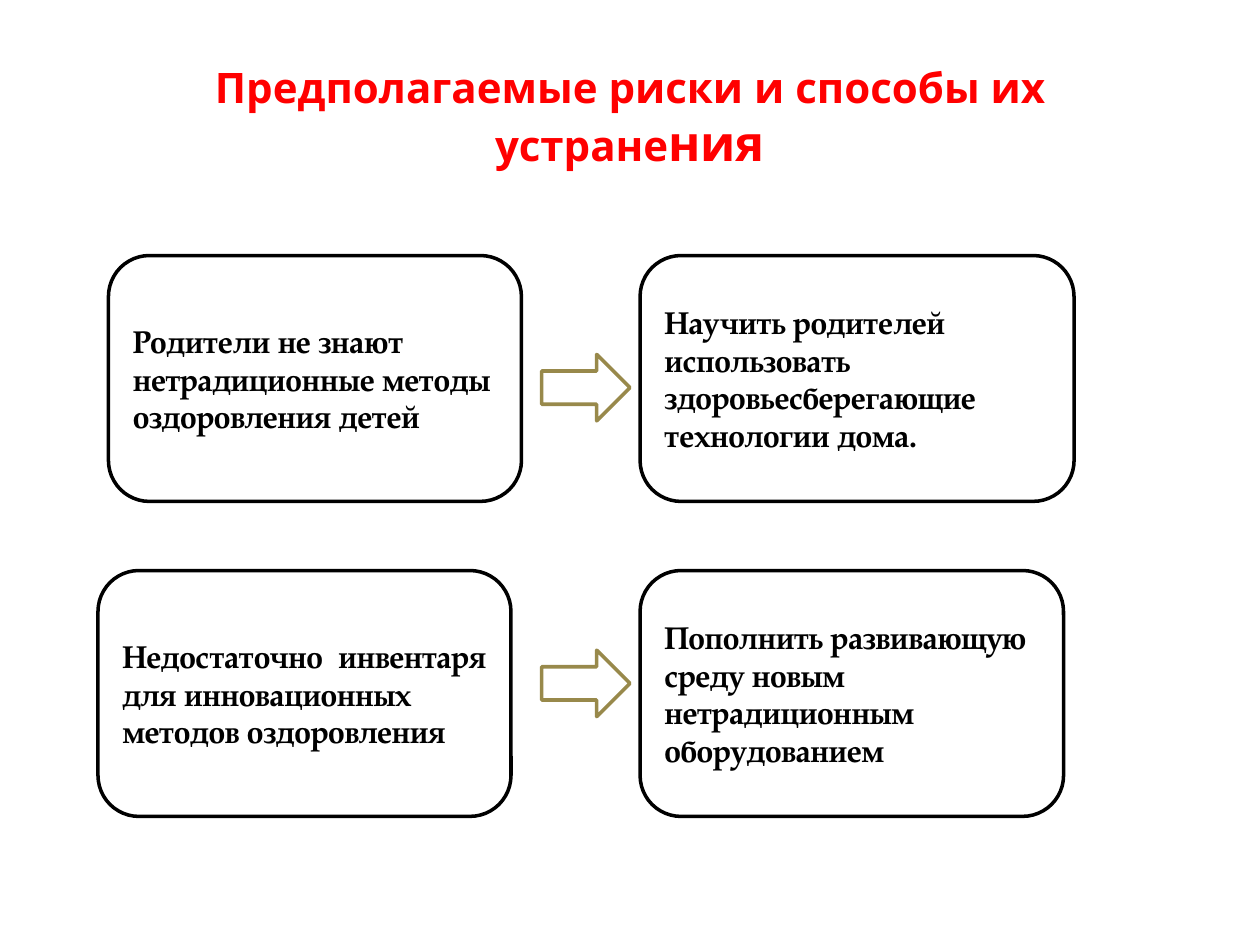
import pptx
import pptx.util
import pptx.dml.color
import pptx.enum.shapes
import pptx.enum.text

Pt = pptx.util.Pt
Kind = pptx.enum.shapes.MSO_SHAPE
Align = pptx.enum.text.PP_ALIGN
Anchor = pptx.enum.text.MSO_ANCHOR


def color(code):
    return pptx.dml.color.RGBColor.from_string(code)


class Board:
    """Holds the style and the current slide."""
    head = "Noto Sans"
    body = "TeX Gyre Pagella"
    red, black, white, gold = "FF0000", "000000", "FFFFFF", "98894B"

    def __init__(self, deck):
        self.slide = deck.slides.add_slide(deck.slide_layouts[5])

    def text(self, para, words, font, size, ink):
        run = para.add_run()
        run.text = words
        run.font.name = font
        run.font.size = Pt(size)
        run.font.bold = True
        run.font.color.rgb = color(ink)

    def start(self, item, align):
        frame = item.text_frame
        frame.word_wrap = True
        frame.vertical_anchor = Anchor.MIDDLE
        para = frame.paragraphs[0]
        para.alignment = align
        return para

    def title(self, runs, left, top, width, height):
        box = self.slide.shapes.title
        box.left, box.top = Pt(left), Pt(top)
        box.width, box.height = Pt(width), Pt(height)
        para = self.start(box, Align.CENTER)
        for words, size in runs:
            self.text(para, words, self.head, size, self.red)

    def shape(self, kind, ink, left, top, width, height):
        item = self.slide.shapes.add_shape(
            kind, Pt(left), Pt(top), Pt(width), Pt(height))
        item.shadow.inherit = False
        item.fill.solid()
        item.fill.fore_color.rgb = color(self.white)
        item.line.color.rgb = color(ink)
        item.line.width = Pt(2)
        return item

    def card(self, words, left, top, width, height=140.5):
        item = self.shape(Kind.ROUNDED_RECTANGLE, self.black,
                          left, top, width, height)
        para = self.start(item, Align.LEFT)
        self.text(para, words, self.body, 18, self.black)

    def arrow(self, left, top):
        self.shape(Kind.RIGHT_ARROW, self.gold, left, top, 50.5, 38)


def main():
    deck = pptx.Presentation()
    deck.slide_width, deck.slide_height = Pt(720), Pt(540)
    board = Board(deck)

    # Title
    board.title([("Предполагаемые риски и способы их устране", 24),
                 ("ния", 28)], 36, 21.6, 648, 90)

    # Each row: risk, arrow, remedy
    rows = [
        (146, 62, 248, 202.5,
         "Родители не знают  нетрадиционные методы оздоровления детей",
         "Научить родителей использовать здоровьесберегающие "
         "технологии дома."),
        (326, 56, 242, 371.5,
         "Недостаточно  инвентаря для инновационных методов оздоровления",
         "Пополнить развивающую среду новым нетрадиционным оборудованием"),
    ]
    for top, left, width, mid, risk, cure in rows:
        board.card(risk, left, top, 236)
        board.card(cure, 365.75, top, width)
        board.arrow(309.5, mid)

    deck.save("out.pptx")


if __name__ == "__main__":
    main()
